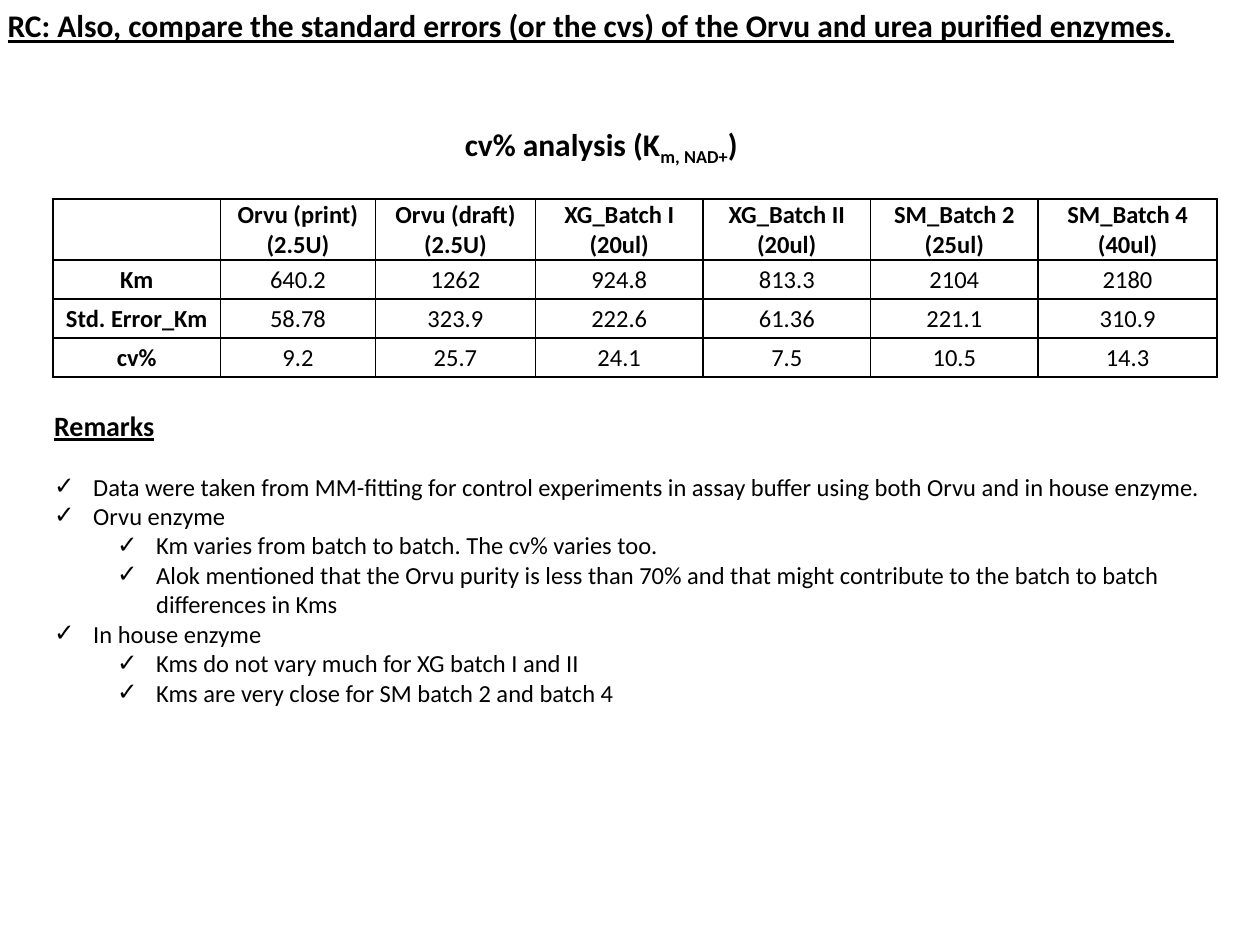
from dataclasses import dataclass

from lxml import etree
from pptx import Presentation
from pptx import util as u
from pptx.dml.color import RGBColor
from pptx.enum import text
from pptx.oxml import ns


@dataclass(frozen=True)
class Theme:
    font: str = "Calibri"
    ink: RGBColor = RGBColor(0, 0, 0)
    paper: RGBColor = RGBColor(255, 255, 255)
    title: int = 18
    heading: int = 16
    body: int = 14


THEME = Theme()
WIDTH, HEIGHT = u.Inches(10), u.Inches(7.5)
UNIT = WIDTH // 100  # the page is a grid of 100 columns by 75 rows

TITLE = "RC: Also, compare the standard errors (or the cvs) of the Orvu and urea purified enzymes."
CAPTION = [("cv% analysis (K", 0), ("m, NAD+", -25000), (")", 0)]
COLUMNS = [13.3, 12.3, 12.7, 13.3, 13.3, 13.3, 14.2]
ROWS = [4.8, 3.1, 3.1, 3.1]
CELLS = [
    ["", "Orvu (print) (2.5U)", "Orvu (draft) (2.5U)", "XG_Batch I (20ul)",
     "XG_Batch II (20ul)", "SM_Batch 2 (25ul)", "SM_Batch 4 (40ul)"],
    ["Km", "640.2", "1262", "924.8", "813.3", "2104", "2180"],
    ["Std. Error_Km", "58.78", "323.9", "222.6", "61.36", "221.1", "310.9"],
    ["cv%", "9.2", "25.7", "24.1", "7.5", "10.5", "14.3"],
]
REMARKS = [
    (0, "Data were taken from MM-fitting for control experiments in assay buffer "
        "using both Orvu and in house enzyme."),
    (0, "Orvu enzyme"),
    (1, "Km varies from batch to batch. The cv% varies too."),
    (1, "Alok mentioned that the Orvu purity is less than 70% and that might "
        "contribute to the batch to batch differences in Kms"),
    (0, "In house enzyme"),
    (1, "Kms do not vary much for XG batch I and II"),
    (1, "Kms are very close for SM batch 2 and batch 4"),
]


def cells(count):
    return round(count * UNIT)


def place(shape, box):
    shape.left, shape.top, shape.width, shape.height = map(cells, box)
    frame = shape.text_frame
    frame.word_wrap = True
    frame.auto_size = text.MSO_AUTO_SIZE.NONE
    frame.vertical_anchor = text.MSO_ANCHOR.TOP
    return frame


def add_span(para, words, size, bold=False, underline=False):
    span = para.add_run()
    span.text = words
    font = span.font
    font.name, font.size = THEME.font, u.Pt(size)
    font.bold, font.underline = bold, underline
    font.color.rgb = THEME.ink
    return span


def set_bullet(para, indent, hang, mark=None):
    """Set indents in grid columns, with a bullet mark or none."""
    props = para._p.get_or_add_pPr()
    props.set("marL", str(cells(indent)))
    props.set("indent", str(-cells(hang)))
    if mark:
        etree.SubElement(props, ns.qn("a:buFont"), typeface=THEME.font)
        etree.SubElement(props, ns.qn("a:buChar"), char=mark)
    else:
        etree.SubElement(props, ns.qn("a:buNone"))


def set_borders(cell):
    props = cell._tc.get_or_add_tcPr()
    for index, side in enumerate(("lnL", "lnR", "lnT", "lnB")):
        line = etree.Element(ns.qn(f"a:{side}"), w=str(u.Pt(1)))
        fill = etree.SubElement(line, ns.qn("a:solidFill"))
        etree.SubElement(fill, ns.qn("a:srgbClr"), val=str(THEME.ink))
        props.insert(index, line)


def fill_title(page, box):
    para = place(page.shapes.title, box).paragraphs[0]
    para.alignment = text.PP_ALIGN.LEFT
    add_span(para, TITLE, THEME.title, bold=True, underline=True)


def add_caption(page, box):
    para = place(page.shapes.add_textbox(0, 0, 0, 0), box).paragraphs[0]
    for words, baseline in CAPTION:
        span = add_span(para, words, THEME.title, bold=True)
        if baseline:
            span.font._element.set("baseline", str(baseline))


def add_cv_table(page, left, top):
    size = cells(sum(COLUMNS)), cells(sum(ROWS))
    table = page.shapes.add_table(len(ROWS), len(COLUMNS), cells(left), cells(top), *size).table
    table.first_row = table.horz_banding = False
    for column, width in zip(table.columns, COLUMNS):
        column.width = cells(width)
    for row_index, (row, height) in enumerate(zip(table.rows, ROWS)):
        row.height = cells(height)
        for column_index, cell in enumerate(row.cells):
            cell.fill.solid()
            cell.fill.fore_color.rgb = THEME.paper
            set_borders(cell)
            cell.vertical_anchor = text.MSO_ANCHOR.MIDDLE
            cell.margin_left = cell.margin_right = cell.margin_top = cells(0.1)
            cell.margin_bottom = 0
            words = CELLS[row_index][column_index]
            if words:
                para = cell.text_frame.paragraphs[0]
                para.alignment = text.PP_ALIGN.CENTER
                add_span(para, words, THEME.body, bold=row_index == 0 or column_index == 0)


def fill_remarks(page, box):
    frame = place(page.placeholders[1], box)
    heading = frame.paragraphs[0]
    heading.space_before = u.Pt(0)
    set_bullet(heading, 0, 0)
    add_span(heading, "Remarks", THEME.heading, bold=True, underline=True)
    for index, (level, words) in enumerate(REMARKS):
        para = frame.add_paragraph()
        para.level = level
        para.space_before = u.Pt(0 if index else 17)
        set_bullet(para, 3.1 + 5 * level, 3.1, "✓")
        add_span(para, words, THEME.body)


def main():
    deck = Presentation()
    deck.slide_width, deck.slide_height = WIDTH, HEIGHT
    page = deck.slides.add_slide(deck.slide_layouts[1])
    fill_title(page, (-0.4, 0, 100.4, 4))
    add_caption(page, (35.9, 9.4, 49.2, 4))
    add_cv_table(page, 4.2, 15.8)
    fill_remarks(page, (3.3, 31.9, 95, 27.3))
    deck.save("out.pptx")


if __name__ == "__main__":
    main()
